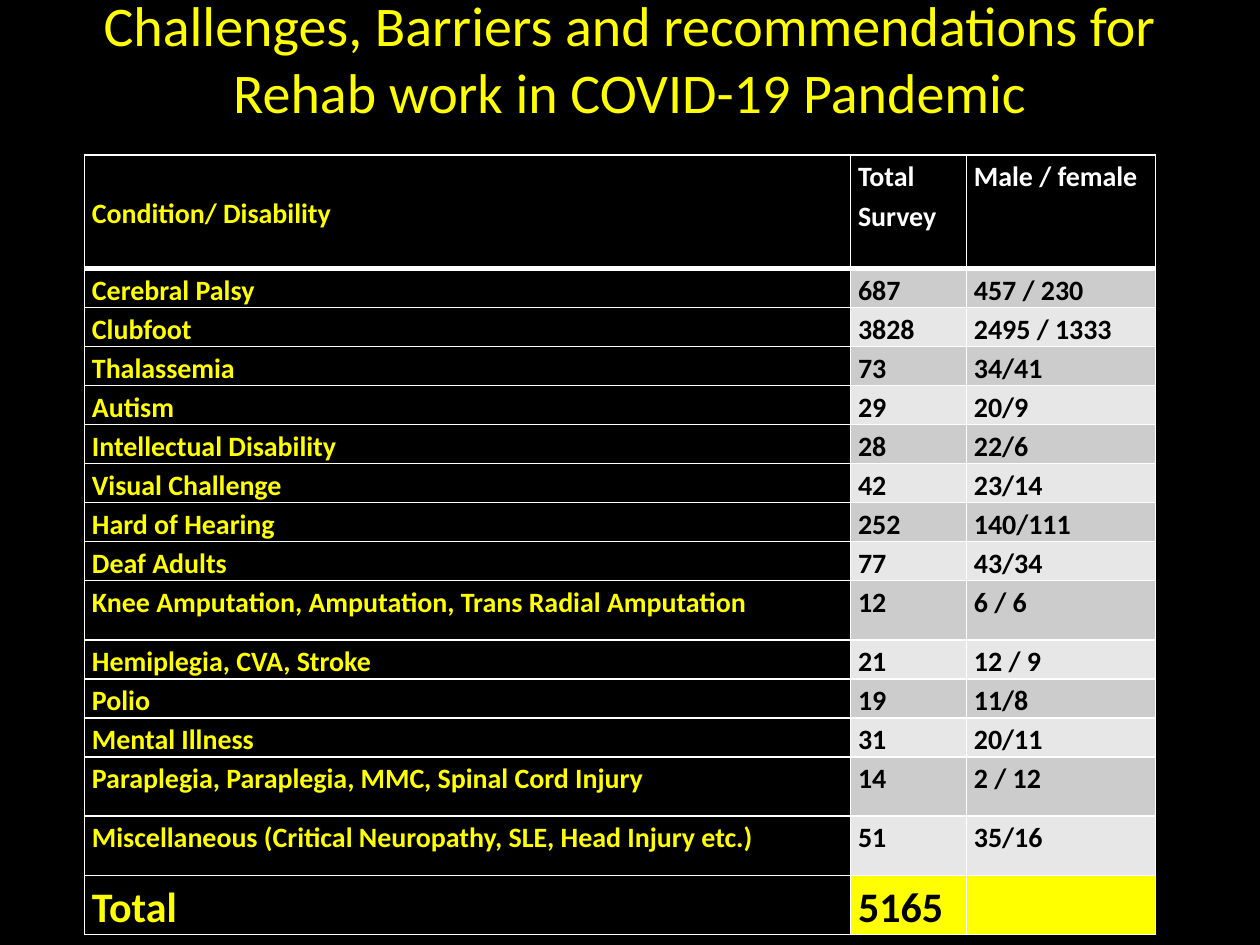
from lxml import etree
from pptx import Presentation
from pptx.dml.color import RGBColor
from pptx.enum.text import MSO_ANCHOR, PP_ALIGN
from pptx.oxml.ns import qn
from pptx.util import Inches, Pt

MID, TOP = MSO_ANCHOR.MIDDLE, MSO_ANCHOR.TOP
CENTER, JUST = PP_ALIGN.CENTER, PP_ALIGN.JUSTIFY

HUES = {"black": "000000", "white": "FFFFFF", "yellow": "FFFF00",
        "dark": "CCCCCC", "light": "E7E7E7"}
TITLE = "Challenges, Barriers and recommendations for Rehab work in COVID-19 Pandemic"
HEAD = ("Condition/ Disability", "Total Survey", "Male / female")
BODY = [
    ("Cerebral Palsy", "687", "457 / 230"),
    ("Clubfoot", "3828", "2495 / 1333"),
    ("Thalassemia", "73", "34/41"),
    ("Autism", "29", "20/9"),
    ("Intellectual Disability", "28", "22/6"),
    ("Visual Challenge", "42", "23/14"),
    ("Hard of Hearing", "252", "140/111"),
    ("Deaf Adults", "77", "43/34"),
    ("Knee Amputation, Amputation, Trans Radial Amputation", "12", "6 / 6"),
    ("Hemiplegia, CVA, Stroke", "21", "12 / 9"),
    ("Polio", "19", "11/8"),
    ("Mental Illness", "31", "20/11"),
    ("Paraplegia, Paraplegia, MMC, Spinal Cord Injury", "14", "2 / 12"),
    ("Miscellaneous (Critical Neuropathy, SLE, Head Injury etc.)", "51", "35/16"),
]
TOTAL = ("Total", "5165", "")
WIDTHS = (6.08, 0.92, 1.5)
HEAD_H, ROW_H, TALL_H = 0.9, 0.31, 0.47
LONG = 40


def color(name):
    return RGBColor.from_string(HUES[name])


def write(frame, text, size=16, hue="yellow", bold=True, align=JUST, space=1.15):
    para = frame.paragraphs[0]
    para.alignment, para.line_spacing = align, space
    for font in (para.font, para.add_run().font):
        font.name, font.size, font.bold = "Calibri", Pt(size), bold
        font.color.rgb = color(hue)
    para.runs[0].text = text


def border(cell, **sides):
    props = cell._tc.get_or_add_tcPr()
    for side, width in sides.items():
        line = etree.SubElement(props, qn("a:ln" + side), w=str(Pt(width)))
        fill = etree.SubElement(line, qn("a:solidFill"))
        etree.SubElement(fill, qn("a:srgbClr"), val=HUES["white"])


def style(row, col):
    if row == 0:
        return "black", "white" if col else "yellow"
    if col == 0:
        return "black", "yellow"
    if row > len(BODY):
        return "yellow", "black"
    return ("dark" if row % 2 else "light"), "black"


def height(row, name):
    if row == 0:
        return HEAD_H
    return TALL_H if row > len(BODY) or len(name) > LONG else ROW_H


def main():
    deck = Presentation()
    deck.slide_width, deck.slide_height = Inches(10), Inches(7.5)
    slide = deck.slides.add_slide(deck.slide_layouts[6])
    slide.background.fill.solid()
    slide.background.fill.fore_color.rgb = color("black")

    box = slide.shapes.add_textbox(Inches(0.5), Inches(-0.17), Inches(9), Inches(1.25))
    box.text_frame.word_wrap = True
    box.text_frame.vertical_anchor = MID
    write(box.text_frame, TITLE, size=32, bold=False, align=CENTER, space=1.0)

    rows = [HEAD, *BODY, TOTAL]
    table = slide.shapes.add_table(len(rows), len(HEAD), Inches(0.67), Inches(1.23),
                                   Inches(sum(WIDTHS)), Inches(6.16)).table
    for col, width in enumerate(WIDTHS):
        table.columns[col].width = Inches(width)
    for r, texts in enumerate(rows):
        table.rows[r].height = Inches(height(r, texts[0]))
        for c, text in enumerate(texts):
            cell = table.cell(r, c)
            back, hue = style(r, c)
            cell.margin_left = cell.margin_right = Inches(0.06)
            cell.margin_top = cell.margin_bottom = 0
            cell.vertical_anchor = MID if r == c == 0 else TOP
            border(cell, L=1, R=1, T=3 if r == 1 else 1, B=1 if r else 3)
            cell.fill.solid()
            cell.fill.fore_color.rgb = color(back)
            write(cell.text_frame, text, size=24 if r > len(BODY) else 16, hue=hue)
    deck.save("out.pptx")


if __name__ == "__main__":
    main()
